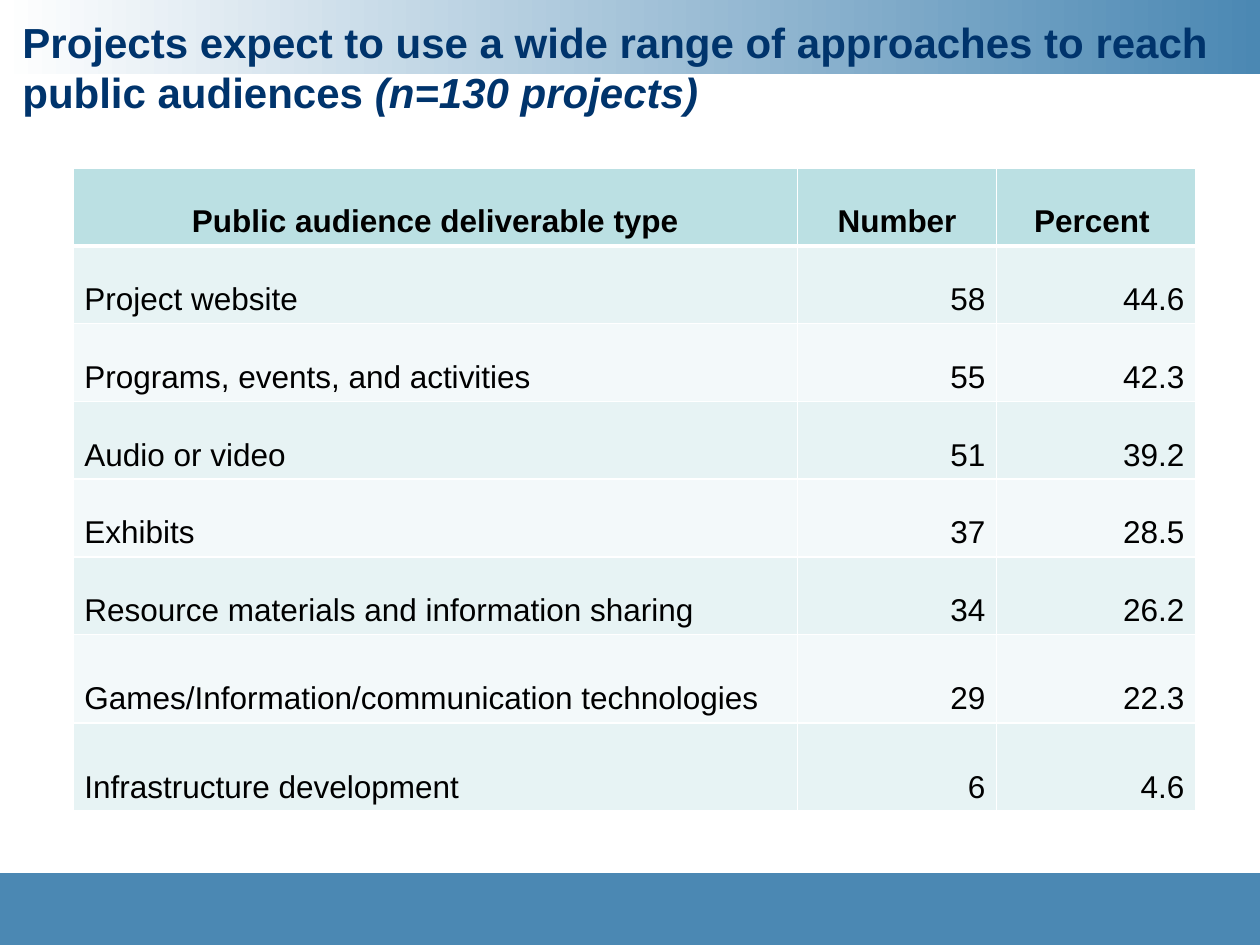
from typing import NamedTuple

import lxml.etree
import pptx
import pptx.dml.color
import pptx.enum.shapes
import pptx.enum.text
import pptx.oxml.ns
import pptx.util

SLIDE_WIDTH, SLIDE_HEIGHT = 10, 7.5
FONT = "Arial"
BLUE, NAVY, WHITE, BLACK = "4B88B3", "00346C", "FFFFFF", "000000"
HEADER_FILL, BAND_FILLS = "BBE0E3", ("E7F3F4", "F3F9FA")
ALIGN = pptx.enum.text.PP_ALIGN


class Box(NamedTuple):
    """A rectangle, given as shares of the slide's size."""
    left: float
    top: float
    width: float
    height: float

    def lengths(self) -> list:
        sizes = (SLIDE_WIDTH, SLIDE_HEIGHT) * 2
        return [pptx.util.Inches(share * size) for share, size in zip(self, sizes)]


class Deliverable(NamedTuple):
    name: str
    number: int
    percent: float


TOP_BAND = Box(0, 0, 1, 0.59 / SLIDE_HEIGHT)
BOTTOM_BAND = Box(0, 6.93 / SLIDE_HEIGHT, 1, 0.57 / SLIDE_HEIGHT)
TITLE = Box(0.008, 0.08 / SLIDE_HEIGHT, 0.975, 1.01 / SLIDE_HEIGHT)
TABLE = Box(0.058, 1.335 / SLIDE_HEIGHT, 0.891, 5.1 / SLIDE_HEIGHT)
COLUMN_WIDTHS = (5.75, 1.58, 1.58)
ROW_HEIGHTS = (0.617,) * 6 + (0.7,) * 2

HEADINGS = ("Public audience deliverable type", "Number", "Percent ")
DELIVERABLES = (
    Deliverable("Project website", 58, 44.6),
    Deliverable("Programs, events, and activities", 55, 42.3),
    Deliverable("Audio or video", 51, 39.2),
    Deliverable("Exhibits", 37, 28.5),
    Deliverable("Resource materials and information sharing", 34, 26.2),
    Deliverable("Games/Information/communication technologies", 29, 22.3),
    Deliverable("Infrastructure development", 6, 4.6),
)


def color(value: str) -> pptx.dml.color.RGBColor:
    return pptx.dml.color.RGBColor.from_string(value)


def add_text(paragraph, text: str, *, size: float, fill: str = BLACK,
             bold: bool = False, italic: bool = False) -> None:
    run = paragraph.add_run()
    run.text = text
    run.font.name = FONT
    run.font.size = pptx.util.Pt(size)
    run.font.bold, run.font.italic = bold, italic
    run.font.color.rgb = color(fill)


def add_band(slide, box: Box, *fills: str) -> None:
    """Draw a plain band, or a left-to-right gradient for two colours."""
    shape = slide.shapes.add_shape(
        pptx.enum.shapes.MSO_SHAPE.RECTANGLE, *box.lengths())
    shape.shadow.inherit = False
    shape.line.fill.background()
    if len(fills) == 1:
        shape.fill.solid()
        shape.fill.fore_color.rgb = color(fills[0])
    else:
        shape.fill.gradient()
        shape.fill.gradient_angle = 0
        for stop, fill in zip(shape.fill.gradient_stops, fills):
            stop.color.rgb = color(fill)


def add_title(slide) -> None:
    frame = slide.shapes.add_textbox(*TITLE.lengths()).text_frame
    frame.word_wrap = True
    paragraph = frame.paragraphs[0]
    style = {"size": 24, "fill": NAVY, "bold": True}
    add_text(paragraph, "Projects expect to use a wide range of approaches "
             "to reach public audiences ", **style)
    add_text(paragraph, "(n=130 projects)", italic=True, **style)


def set_borders(cell, **widths: float) -> None:
    """Add white borders ahead of the cell's fill, as the schema asks."""
    properties = cell._tc.get_or_add_tcPr()
    name = pptx.oxml.ns.qn
    for index, (side, width) in enumerate(widths.items()):
        line = lxml.etree.Element(name(f"a:{side}"), w=str(pptx.util.Pt(width)))
        solid = lxml.etree.SubElement(line, name("a:solidFill"))
        lxml.etree.SubElement(solid, name("a:srgbClr"), val=WHITE)
        properties.insert(index, line)


def fill_cell(cell, text: str, *, fill: str, align, header: bool,
              top: float, bottom: float) -> None:
    cell.fill.solid()
    cell.fill.fore_color.rgb = color(fill)
    cell.vertical_anchor = pptx.enum.text.MSO_ANCHOR.BOTTOM
    cell.margin_left = cell.margin_right = pptx.util.Inches(0.09)
    cell.margin_top = cell.margin_bottom = pptx.util.Inches(0.05)
    paragraph = cell.text_frame.paragraphs[0]
    paragraph.alignment = align
    paragraph.line_spacing = pptx.util.Pt(12)
    add_text(paragraph, text, size=18, bold=header)
    set_borders(cell, lnL=1, lnR=1, lnT=top, lnB=bottom)


def add_deliverables_table(slide) -> None:
    rows = (HEADINGS, *DELIVERABLES)
    table = slide.shapes.add_table(
        len(rows), len(HEADINGS), *TABLE.lengths()).table
    for column, width in zip(table.columns, COLUMN_WIDTHS):
        column.width = pptx.util.Inches(width)
    for row, height in zip(table.rows, ROW_HEIGHTS):
        row.height = pptx.util.Inches(height)

    for row_index, values in enumerate(rows):
        header = row_index == 0
        fill = HEADER_FILL if header else BAND_FILLS[(row_index - 1) % 2]
        for column_index, value in enumerate(values):
            body_align = ALIGN.RIGHT if column_index else ALIGN.LEFT
            fill_cell(table.cell(row_index, column_index), str(value),
                      fill=fill, header=header,
                      align=ALIGN.CENTER if header else body_align,
                      top=3 if row_index == 1 else 1,
                      bottom=3 if header else 1)


def main() -> None:
    presentation = pptx.Presentation()
    presentation.slide_width = pptx.util.Inches(SLIDE_WIDTH)
    presentation.slide_height = pptx.util.Inches(SLIDE_HEIGHT)
    slide = presentation.slides.add_slide(presentation.slide_layouts[6])

    # Bands at the slide's top and bottom edges
    add_band(slide, TOP_BAND, WHITE, BLUE)
    add_band(slide, BOTTOM_BAND, BLUE)

    # Heading and table
    add_title(slide)
    add_deliverables_table(slide)

    presentation.save("out.pptx")


if __name__ == "__main__":
    main()
